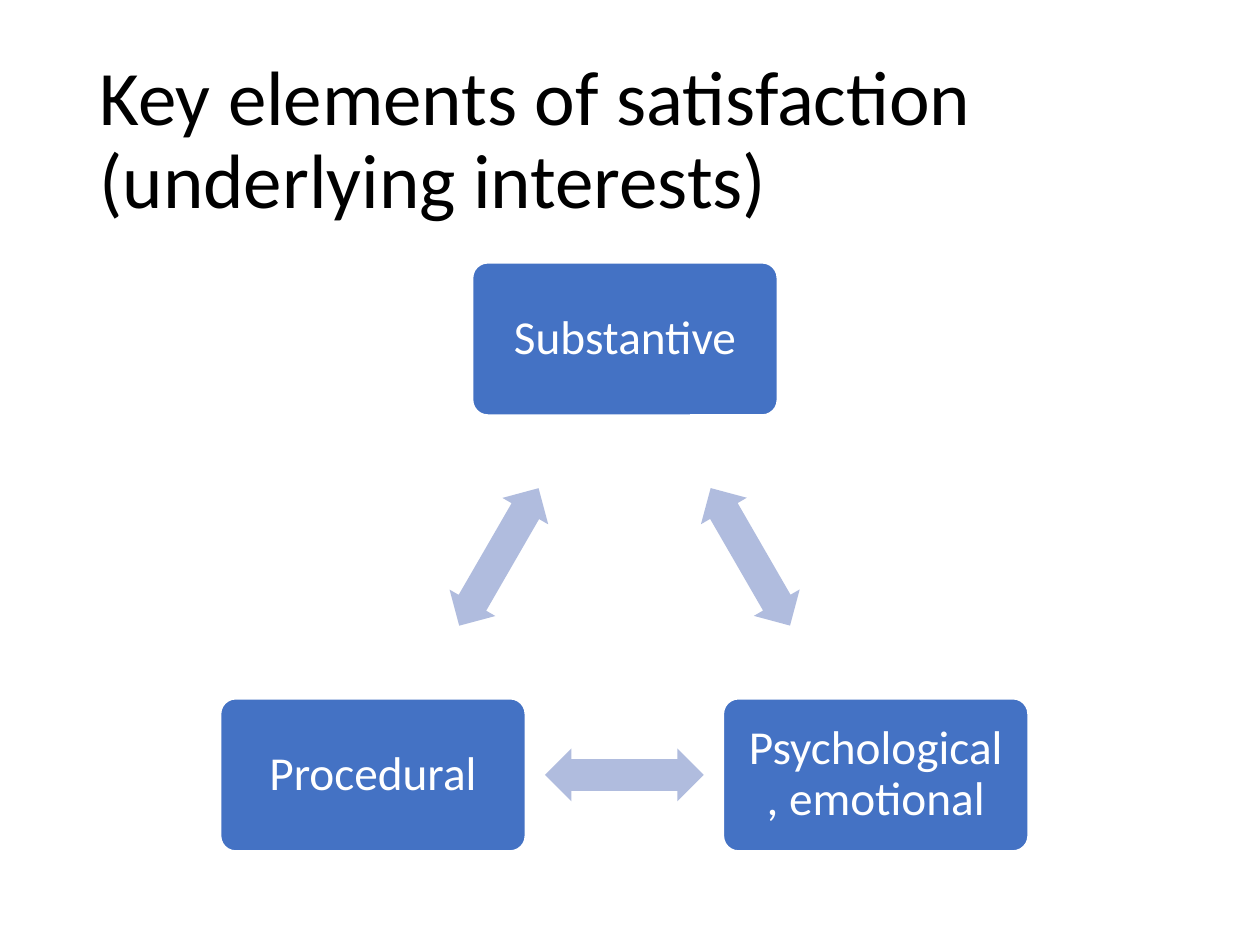
"""Build a slide showing the three linked elements of satisfaction."""
from dataclasses import dataclass, field

from pptx import Presentation
from pptx.dml.color import RGBColor
from pptx.enum.shapes import MSO_SHAPE as Shape
from pptx.enum.text import MSO_ANCHOR as Anchor, PP_ALIGN as Align
from pptx.slide import Slide
from pptx.util import Inches, Pt

COLORS = {"title": "000000", "label": "FFFFFF", "outline": "FFFFFF",
          "element": "4472C4", "link": "B0BCDE"}


@dataclass
class SlideBuilder:
    slide: Slide
    font: str = "Calibri"
    colors: dict = field(default_factory=lambda: COLORS)

    def color(self, role):
        return RGBColor.from_string(self.colors[role])

    def add_text(self, frame, text, size, role, align):
        frame.word_wrap = True
        frame.vertical_anchor = Anchor.MIDDLE
        paragraph = frame.paragraphs[0]
        paragraph.alignment = align
        paragraph.line_spacing = 0.9
        run = paragraph.add_run()
        run.text = text
        run.font.name = self.font
        run.font.size = Pt(size)
        run.font.color.rgb = self.color(role)

    def title(self, text, left, top, width, height):
        box = self.slide.shapes.add_textbox(
            Inches(left), Inches(top), Inches(width), Inches(height))
        self.add_text(box.text_frame, text, 44, "title", Align.LEFT)

    def centered(self, preset, center, size, adjustments, role):
        (x, y), (width, height) = center, size
        shape = self.slide.shapes.add_shape(
            preset, Inches(x - width / 2), Inches(y - height / 2),
            Inches(width), Inches(height))
        for index, value in enumerate(adjustments):
            shape.adjustments[index] = value
        shape.shadow.inherit = False
        shape.fill.solid()
        shape.fill.fore_color.rgb = self.color(role)
        return shape

    def element(self, text, center):
        box = self.centered(Shape.ROUNDED_RECTANGLE, center, (2.42, 1.21),
                            [0.1], "element")
        box.line.color.rgb = self.color("outline")
        box.line.width = Pt(1)
        frame = box.text_frame
        frame.margin_left = frame.margin_right = Inches(0.14)
        frame.margin_top = frame.margin_bottom = Inches(0.14)
        self.add_text(frame, text, 27, "label", Align.CENTER)

    def link(self, start, end, rotation):
        middle = [(a + b) / 2 for a, b in zip(start, end)]
        arrow = self.centered(Shape.LEFT_RIGHT_ARROW, middle, (1.26, 0.42),
                              [0.6, 0.5], "link")
        arrow.line.fill.background()
        arrow.rotation = rotation


def main():
    prs = Presentation()
    prs.slide_width, prs.slide_height = Inches(10), Inches(7.5)
    builder = SlideBuilder(prs.slides.add_slide(prs.slide_layouts[6]))
    builder.title("Key elements of satisfaction (underlying interests)",
                  0.69, 0.4, 8.62, 1.45)

    elements = [("Substantive", (4.96, 2.69)),
                ("Psychological, emotional", (6.95, 6.15)),
                ("Procedural", (2.96, 6.15))]
    for index, (label, center) in enumerate(elements):
        following = elements[(index + 1) % len(elements)][1]
        builder.element(label, center)
        builder.link(center, following, 60 + 120 * index)

    prs.save("out.pptx")


if __name__ == "__main__":
    main()
